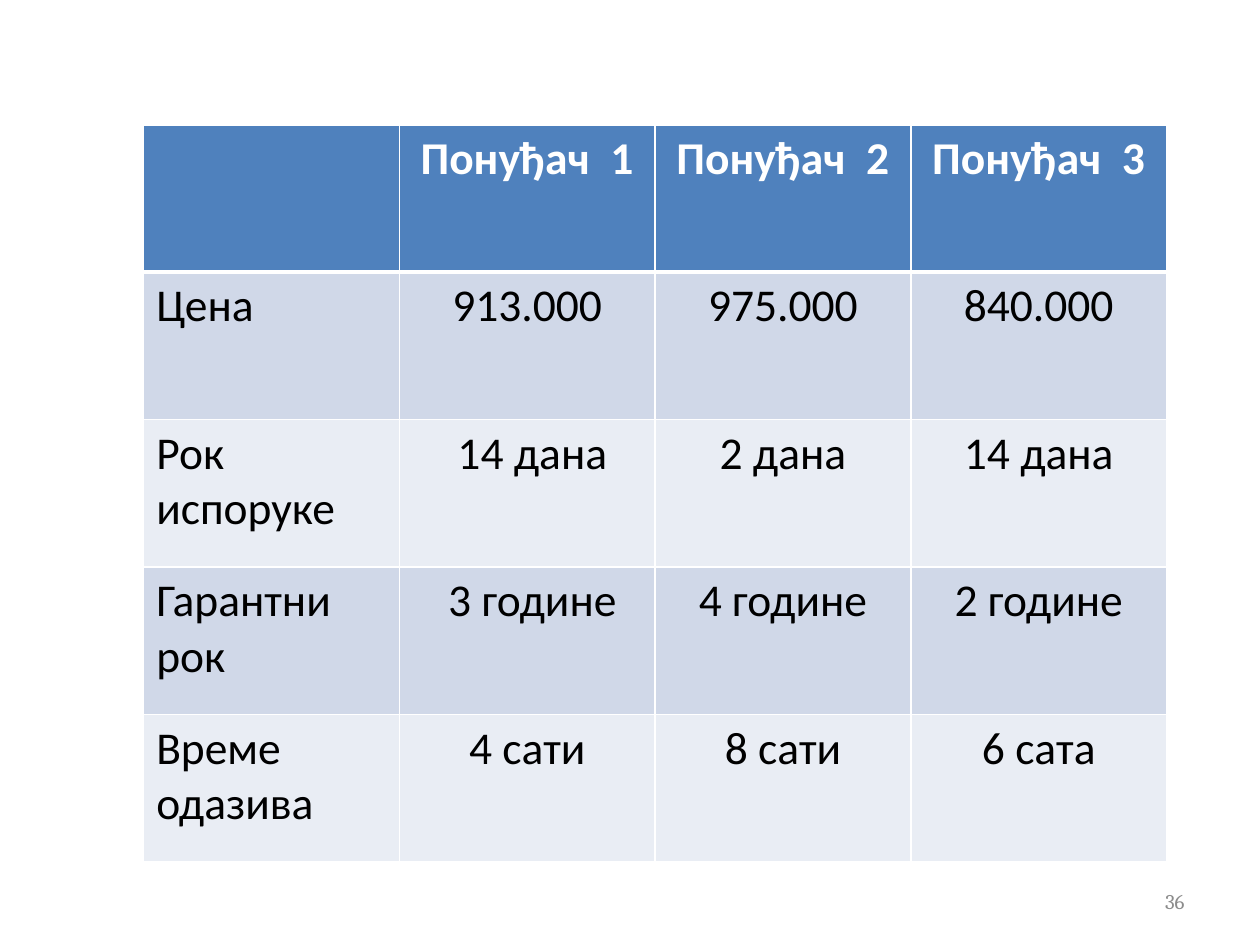
from typing import NamedTuple

from lxml import etree
from pptx import Presentation
from pptx.dml.color import RGBColor
from pptx.enum import text
from pptx.oxml import ns
from pptx import util as u

WHITE = RGBColor(0xFF, 0xFF, 0xFF)
BLACK = RGBColor(0x00, 0x00, 0x00)
GREY = RGBColor(0x8C, 0x8C, 0x8C)
HEAD = RGBColor(0x4F, 0x81, 0xBD)
BANDS = (RGBColor(0xD0, 0xD8, 0xE8), RGBColor(0xE9, 0xED, 0xF4))
WIDE, HIGH = u.Inches(10), u.Inches(7.5)


class Look(NamedTuple):
    font: str
    size: int
    color: RGBColor
    bold: bool = False
    align: text.PP_ALIGN = text.PP_ALIGN.LEFT


class Offer(NamedTuple):
    label: str
    bids: tuple[str, str, str]


ROWS = [
    Offer("", ("Понуђач  1", "Понуђач  2", "Понуђач  3")),
    Offer("Цена", ("913.000", "975.000", "840.000")),
    Offer("Рок испоруке", (" 14 дана", "2 дана", "14 дана")),
    Offer("Гарантни рок", (" 3 године", "4 године", "2 године")),
    Offer("Време одазива", ("4 сати", "8 сати", "6 сата")),
]


def write(frame, words: str, look: Look) -> None:
    para = frame.paragraphs[0]
    para.text = words
    para.alignment = look.align
    font = para.font
    font.name, font.size, font.bold = look.font, u.Pt(look.size), look.bold
    font.color.rgb = look.color


def edge(cell, side: str, width: float) -> None:
    line = etree.Element(ns.qn(f"a:ln{side}"), w=str(u.Pt(width)))
    fill = etree.SubElement(line, ns.qn("a:solidFill"))
    etree.SubElement(fill, ns.qn("a:srgbClr"), val=str(WHITE))
    cell.fill.solid()
    props = cell._tc.get_or_add_tcPr()
    # Borders come before the fill, in the order left, right, top, bottom
    props.insert("LRTB".index(side), line)


def draw_table(slide) -> None:
    count, cols = len(ROWS), 4
    col, row = u.Inches(2.03), u.Inches(1.17)
    table = slide.shapes.add_table(
        count, cols, u.Inches(1.14), u.Inches(0.99), col * cols, row * count
    ).table
    for r, offer in enumerate(ROWS):
        table.rows[r].height = row
        head = r == 0
        for c, words in enumerate((offer.label, *offer.bids)):
            cell = table.cell(r, c)
            for side in "LRTB":
                thick = (head and side == "B") or (r == 1 and side == "T")
                edge(cell, side, 3 if thick else 1)
            cell.fill.fore_color.rgb = HEAD if head else BANDS[(r - 1) % 2]
            align = text.PP_ALIGN.CENTER if c else text.PP_ALIGN.LEFT
            look = Look("Calibri", 26, WHITE if head else BLACK, head, align)
            write(cell.text_frame, words, look)


def draw_number(slide) -> None:
    box = slide.shapes.add_textbox(
        u.Inches(7.17), u.Inches(6.95), u.Inches(2.33), u.Inches(0.4)
    )
    frame = box.text_frame
    frame.word_wrap = True
    frame.vertical_anchor = text.MSO_ANCHOR.MIDDLE
    write(frame, "36", Look("Cambria", 12, GREY, align=text.PP_ALIGN.RIGHT))


def main() -> None:
    deck = Presentation()
    deck.slide_width, deck.slide_height = WIDE, HIGH
    slide = deck.slides.add_slide(deck.slide_layouts[6])
    # Page number, then the comparison of offers
    draw_number(slide)
    draw_table(slide)
    deck.save("out.pptx")


if __name__ == "__main__":
    main()
